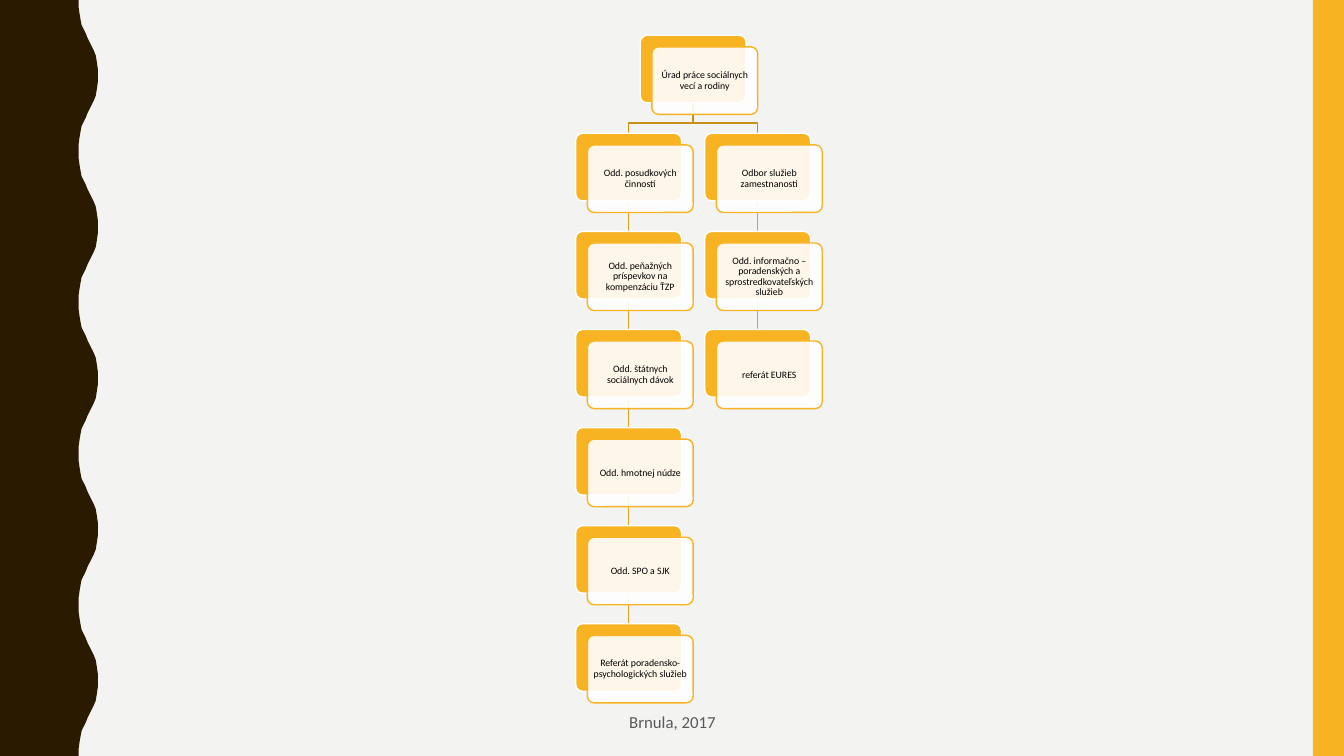
from lxml import etree
from pptx import Presentation
from pptx.dml.color import RGBColor
from pptx.enum import shapes, text
from pptx.oxml.ns import qn
from pptx.util import Inches, Pt

AMBER, WHITE = "F8B323", "FFFFFF"


def rgb(value):
    return RGBColor.from_string(value)


def style(sp, fill=None, line=None):
    sp.shadow.inherit = False
    if fill:
        sp.fill.solid()
        sp.fill.fore_color.rgb = rgb(fill)
    else:
        sp.fill.background()
    if line:
        sp.line.color.rgb = rgb(line)
        sp.line.width = Pt(1)
    else:
        sp.line.fill.background()


prs = Presentation()
prs.slide_width, prs.slide_height = Inches(13.33), Inches(7.5)
s = prs.slides.add_slide(prs.slide_layouts[6])
s.background.fill.solid()
s.background.fill.fore_color.rgb = rgb("F3F3F2")

# Wavy band on the left: half a wave, mirrored and repeated five times
half = [(0.78, 0), (0.78, 0.07), (0.79, 0.14), (0.8, 0.2), (0.81, 0.25),
        (0.83, 0.29), (0.85, 0.33), (0.87, 0.38), (0.89, 0.42), (0.91, 0.46),
        (0.93, 0.5), (0.95, 0.55), (0.96, 0.61), (0.97, 0.68), (0.97, 0.75)]
wave = half + [(x, 1.5 - y) for x, y in reversed(half[:-1])]
edge = [(x, y + 1.5 * i) for i in range(5) for x, y in wave]
fb = s.shapes.build_freeform(0, 0)
fb.add_line_segments([(Inches(x), Inches(y)) for x, y in edge + [(0, 7.5)]])
style(fb.convert_to_shape(), "2A1A00")

# Amber bar on the right
bar = s.shapes.add_shape(shapes.MSO_SHAPE.RECTANGLE, Inches(13.02), 0,
                         Inches(0.31), Inches(7.5))
style(bar, AMBER)

# Organisation chart: left edge, first row and labels of each column
columns = [
    (6.35, 0, ["Úrad práce sociálnych vecí a rodiny"]),
    (5.71, 1, ["Odd. posudkových činností",
               "Odd. peňažných príspevkov na kompenzáciu ŤZP",
               "Odd. štátnych sociálnych dávok",
               "Odd. hmotnej núdze",
               "Odd. SPO a SJK",
               "Referát poradensko-psychologických služieb"]),
    (6.99, 1, ["Odbor služieb zamestnanosti",
               "Odd. informačno – poradenských a sprostredkovateľských služieb",
               "referát EURES"]),
]
TOP, STEP, BOX_W, BOX_H, SHIFT = 0.35, 0.973, 1.05, 0.67, 0.115
root_x = columns[0][0] + BOX_W / 2

# Links lie behind the boxes
for left, first, labels in columns[1:]:
    x = left + BOX_W / 2
    for row in range(first + 1, first + len(labels)):
        y = TOP + row * STEP
        link = s.shapes.add_connector(
            shapes.MSO_CONNECTOR.STRAIGHT, Inches(x), Inches(y - STEP + BOX_H),
            Inches(x), Inches(y))
        link.line.color.rgb = rgb("E1A220")
        link.line.width = Pt(1)
        etree.SubElement(link._element.spPr, qn("a:effectLst"))
    fb = s.shapes.build_freeform(Inches(root_x), Inches(TOP + BOX_H))
    fb.add_line_segments([(Inches(px), Inches(py)) for px, py in
                          [(root_x, 1.22), (x, 1.22), (x, TOP + STEP)]],
                         close=False)
    style(fb.convert_to_shape(), line="C78F1C")

# Boxes: an amber back plate and a translucent card with the label
for left, first, labels in columns:
    for row, label in enumerate(labels, first):
        y = TOP + row * STEP
        for shift, fill, line in [(0, AMBER, WHITE), (SHIFT, WHITE, AMBER)]:
            sp = s.shapes.add_shape(
                shapes.MSO_SHAPE.ROUNDED_RECTANGLE, Inches(left + shift),
                Inches(y + shift), Inches(BOX_W), Inches(BOX_H))
            sp.adjustments[0] = 0.1
            style(sp, fill, line)
        color = sp._element.spPr.find(qn("a:solidFill")).find(qn("a:srgbClr"))
        etree.SubElement(color, qn("a:alpha"), val="90000")
        tf = sp.text_frame
        tf.word_wrap = True
        tf.vertical_anchor = text.MSO_ANCHOR.MIDDLE
        tf.margin_left = tf.margin_right = Inches(0.03)
        tf.margin_top = tf.margin_bottom = Inches(0.03)
        p = tf.paragraphs[0]
        p.text = label
        p.alignment = text.PP_ALIGN.CENTER
        p.line_spacing = 0.9
        p.font.size, p.font.name = Pt(7), "Calibri"
        p.font.color.rgb = rgb("000000")

# Footer
tf = s.shapes.add_textbox(Inches(4.42), Inches(6.97), Inches(4.5),
                          Inches(0.38)).text_frame
tf.word_wrap = True
tf.vertical_anchor = text.MSO_ANCHOR.MIDDLE
p = tf.paragraphs[0]
p.text = "Brnula, 2017"
p.alignment = text.PP_ALIGN.CENTER
p.font.size, p.font.name = Pt(12), "Calibri"
p.font.color.rgb = rgb("595959")

prs.save("out.pptx")
